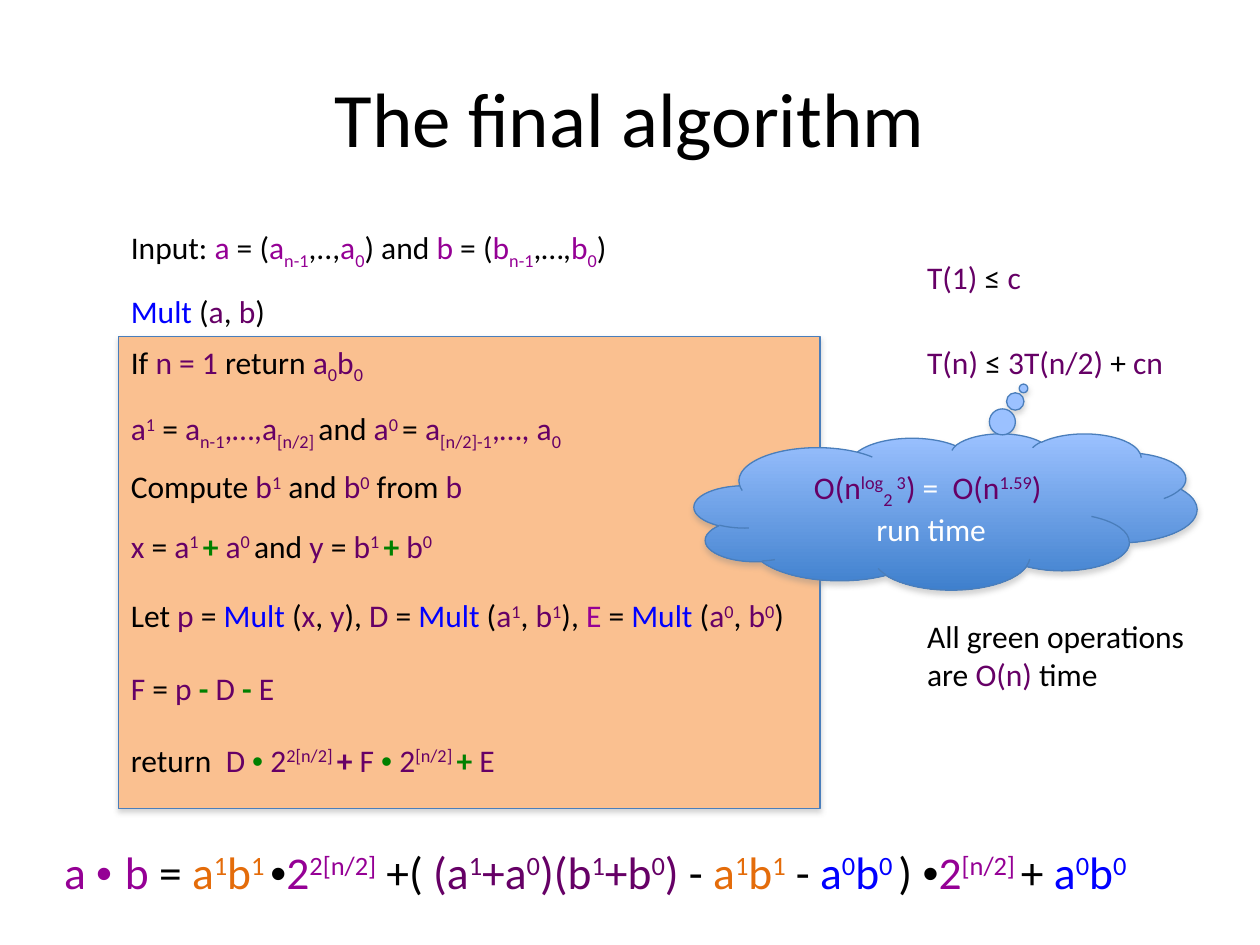
"""Build a slide showing the final divide-and-conquer multiplication algorithm."""
import pptx
import pptx.dml.color
import pptx.enum.shapes
import pptx.enum.text
import pptx.oxml
import pptx.oxml.ns
import pptx.util

Pt = pptx.util.Pt
ANCHOR = pptx.enum.text.MSO_ANCHOR
ALIGN = pptx.enum.text.PP_ALIGN
SHAPE = pptx.enum.shapes.MSO_SHAPE

COLOURS = {
    "black": "000000", "white": "FFFFFF", "plum": "660066", "violet": "950095",
    "blue": "0000FF", "green": "008000", "orange": "E46C0A", "peach": "FAC090",
    "edge": "4A7EBB", "sky": "9BC1FF", "deep": "3F80CD", "shade": "808080",
}
STEP_LEFT, NOTE_LEFT = 67.7, 522.7

STEPS = [
    (126.7, 298, "Input: {violet}a{black} = ({violet}a_n-1_{black},..,{violet}a_0_{black}) and "
                 "{violet}b{black} = ({violet}b_n-1_{black},…,{violet}b_0_{black})"),
    (163.4, 92, "{blue}Mult{black} ({plum}a{black}, {plum}b{black})"),
    (192.2, 150.5, "If {plum}n = 1 {black}return {plum}a_0_b_0_"),
    (230.4, 277, "{plum}a^1^{black} = {plum}a_n-1_,…,a_[n/2] _{black}and {plum}a^0 ^{black}= "
                 "{plum}a_[n/2]-1_,…, a_0_"),
    (263.5, 213, "Compute {plum}b^1^{black} and {plum}b^0^{black} from {plum}b"),
    (297.4, 196.5, "{plum}x{black} = {plum}a^1 ^{green bold}+{plum} a^0 ^{black}and "
                   "{plum}y{black} = {plum}b^1 ^{green bold}+{plum} b^0^"),
    (337, 401, "Let {plum}p{black} = {blue}Mult{black} ({plum}x{black}, {plum}y{black}), "
               "{plum}D{black} = {blue}Mult{black} ({plum}a^1^{black}, {plum}b^1^{black}), "
               "{violet}E{black} = {blue}Mult{black} ({plum}a^0^{black}, {plum}b^0^{black})"),
    (378.7, 97, "{plum}F{black} = {plum}p {green bold}-{plum} D {green bold}-{plum} E"),
    (419.8, 237.5, "return  {plum}D {green}•{plum} 2^2[n/2] ^{plum bold}+{plum} F "
                   "{green}•{plum} 2^[n/2] ^{green bold}+{plum} E"),
]
NOTES = [
    (144, 68.5, ["{plum}T(1) {black}≤ {plum}c"]),
    (192.2, 150.5, ["{plum}T(n) {black}≤ {plum}3T(n/2){black} + {plum}cn"]),
    (349.2, 163.5, ["All green operations", "are {plum}O(n) {black}time"]),
]
PRODUCT = (
    "{violet}a {violet}• {violet}b{black} = {orange}a^1^b^1 ^{black}•{violet}2^2[n/2]^{black} +( "
    "{plum}(a^1^+a^0^)(b^1^+b^0^) {black}- {orange}a^1^b^1^{black} - {blue}a^0^b^0 ^{black}) "
    "{black}•{violet}2^[n/2] ^{black}+ {blue}a^0^b^0^"
)
RUN_TIME = ["{plum}O(n^log^_2_^ 3^) {white}=  {plum}O(n^1.59^)", "{white} run time"]


def rgb(name):
    """Return the named colour."""
    return pptx.dml.color.RGBColor.from_string(COLOURS[name])


def split_scripts(text):
    """Yield (piece, baseline), where ^...^ is raised and _..._ is lowered."""
    for i, upper in enumerate(text.split("^")):
        if i % 2:
            yield upper, 30000
            continue
        for j, piece in enumerate(upper.split("_")):
            if piece:
                yield piece, -25000 if j % 2 else 0


def write_formula(paragraph, markup, size):
    """Write markup such as '{plum}a^1^' as formatted runs."""
    for chunk in ("{black}" + markup).split("{")[1:]:
        style, text = chunk.split("}")
        colour, *weight = style.split()
        for piece, baseline in split_scripts(text):
            run = paragraph.add_run()
            run.text = piece
            run.font.size = Pt(size)
            run.font.name = "Arial" if "•" in piece else "Calibri"
            run.font.color.rgb = rgb(colour)
            if weight:
                run.font.bold = True
            if baseline:
                run.font._element.set("baseline", str(baseline))


def write_lines(frame, lines, size, align):
    """Fill a text frame with one paragraph per line."""
    for i, line in enumerate(lines):
        paragraph = frame.add_paragraph() if i else frame.paragraphs[0]
        paragraph.alignment = align
        write_formula(paragraph, line, size)


def add_text(slide, left, top, width, height, lines, size=18):
    """Add a left-aligned text box that does not wrap."""
    frame = slide.shapes.add_textbox(Pt(left), Pt(top), Pt(width), Pt(height)).text_frame
    frame.word_wrap = False
    frame.auto_size = pptx.enum.text.MSO_AUTO_SIZE.SHAPE_TO_FIT_TEXT
    write_lines(frame, lines, size, ALIGN.LEFT)


def add_title(slide, title):
    """Add the centred slide title."""
    frame = slide.shapes.add_textbox(Pt(36), Pt(21.6), Pt(648), Pt(90)).text_frame
    frame.word_wrap = True
    frame.vertical_anchor = ANCHOR.MIDDLE
    write_lines(frame, [title], 44, ALIGN.CENTER)


def add_panel(slide, kind, left, top, width, height):
    """Add an outlined shape with a soft shadow below it."""
    panel = slide.shapes.add_shape(kind, Pt(left), Pt(top), Pt(width), Pt(height))
    panel.line.color.rgb = rgb("edge")
    panel.line.width = Pt(0.75)
    panel.shadow.inherit = False
    effects = panel._element.spPr.find(pptx.oxml.ns.qn("a:effectLst"))
    effects.append(pptx.oxml.parse_xml(
        f'<a:outerShdw {pptx.oxml.ns.nsdecls("a")} blurRad="{Pt(3.1)}" dist="{Pt(1.8)}" '
        f'dir="5400000" rotWithShape="0"><a:srgbClr val="{COLOURS["shade"]}">'
        '<a:alpha val="35000"/></a:srgbClr></a:outerShdw>'))
    return panel


def add_algorithm_box(slide):
    """Add the filled box behind the algorithm's steps."""
    box = add_panel(slide, SHAPE.RECTANGLE, STEP_LEFT, 192.2, 401, 270)
    box.fill.solid()
    box.fill.fore_color.rgb = rgb("peach")


def add_run_time_cloud(slide):
    """Add the thought cloud that states the run time."""
    cloud = add_panel(slide, SHAPE.CLOUD_CALLOUT, 396.7, 247.7, 287.3, 89.3)
    cloud.adjustments[0], cloud.adjustments[1] = 0.155, -0.788
    cloud.fill.gradient()
    cloud.fill.gradient_angle = 270
    for stop, position, colour in zip(cloud.fill.gradient_stops, (0, 1), ("sky", "deep")):
        stop.position = position
        stop.color.rgb = rgb(colour)
    cloud.text_frame.word_wrap = True
    cloud.text_frame.vertical_anchor = ANCHOR.MIDDLE
    write_lines(cloud.text_frame, RUN_TIME, 18, ALIGN.CENTER)


def main():
    """Build and save the slide."""
    deck = pptx.Presentation()
    deck.slide_width, deck.slide_height = Pt(720), Pt(540)
    slide = deck.slides.add_slide(deck.slide_layouts[6])
    add_algorithm_box(slide)
    add_title(slide, "The final algorithm")
    for top, width, step in STEPS:
        add_text(slide, STEP_LEFT, top, width, 29, [step])
    add_text(slide, 29.5, 478.8, 685.5, 40.3, [PRODUCT], 26)
    for top, width, lines in NOTES:
        add_text(slide, NOTE_LEFT, top, width, 7.2 + 21.8 * len(lines), lines)
    add_run_time_cloud(slide)
    deck.save("out.pptx")


if __name__ == "__main__":
    main()
